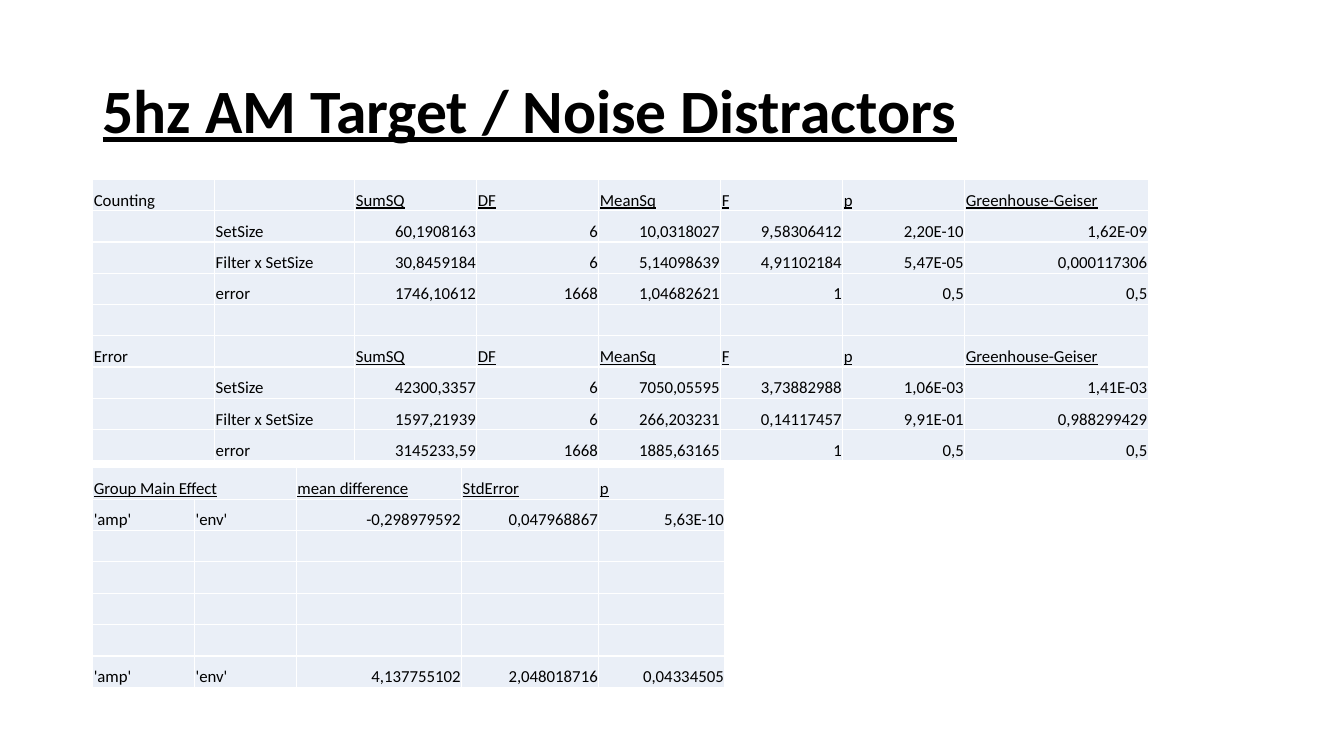
from lxml import etree
from pptx import Presentation
from pptx.dml.color import RGBColor
from pptx.enum.text import MSO_ANCHOR, PP_ALIGN
from pptx.oxml.ns import qn
from pptx.util import Inches, Pt

LEFT, RIGHT = PP_ALIGN.LEFT, PP_ALIGN.RIGHT
MIDDLE, BOTTOM = MSO_ANCHOR.MIDDLE, MSO_ANCHOR.BOTTOM

# Content
TITLE = "5hz AM Target / Noise Distractors"
STATISTICS = ["SumSQ", "DF", "MeanSq", "F", "p", "Greenhouse-Geiser"]
ANOVA = [
    ["Counting", "", *STATISTICS],
    ["", "SetSize", "60,1908163", "6", "10,0318027", "9,58306412", "2,20E-10", "1,62E-09"],
    ["", "Filter x SetSize", "30,8459184", "6", "5,14098639", "4,91102184", "5,47E-05", "0,000117306"],
    ["", "error", "1746,10612", "1668", "1,04682621", "1", "0,5", "0,5"],
    [""] * 8,
    ["Error", "", *STATISTICS],
    ["", "SetSize", "42300,3357", "6", "7050,05595", "3,73882988", "1,06E-03", "1,41E-03"],
    ["", "Filter x SetSize", "1597,21939", "6", "266,203231", "0,14117457", "9,91E-01", "0,988299429"],
    ["", "error", "3145233,59", "1668", "1885,63165", "1", "0,5", "0,5"],
]
GROUP_EFFECT = [
    ["Group Main Effect", "", "mean difference", "StdError", "p"],
    ["'amp'", "'env'", "-0,298979592", "0,047968867", "5,63E-10"],
    *[[""] * 5 for _ in range(4)],
    ["'amp'", "'env'", "4,137755102", "2,048018716", "0,04334505"],
]

# Layout and style
MARGIN_LEFT = 0.92
ANOVA_WIDTHS = [1.21, 1.39, 1.21, 1.21, 1.21, 1.21, 1.21, 1.82]
GROUP_WIDTHS = [1.01, 1.01, 1.64, 1.36, 1.25]
LABEL_COLUMNS = 2
FONT = "Calibri"
BLACK, WHITE, PALE_BLUE = "000000", "FFFFFF", "EAEFF7"


def color(hex_code):
    return RGBColor.from_string(hex_code)


def write_text(frame, text, size=12, bold=False, underline=False, align=LEFT, spacing=1.0):
    paragraph = frame.paragraphs[0]
    paragraph.alignment = align
    paragraph.line_spacing = spacing
    run = paragraph.add_run()
    run.text = text
    run.font.name = FONT
    run.font.size = Pt(size)
    run.font.bold = bold
    run.font.underline = underline
    run.font.color.rgb = color(BLACK)


def draw_borders(cell):
    properties = cell._tc.get_or_add_tcPr()
    for position, side in enumerate(("lnL", "lnR", "lnT", "lnB")):
        line = etree.Element(qn(f"a:{side}"), w=str(Pt(1)))
        fill = etree.SubElement(line, qn("a:solidFill"))
        etree.SubElement(fill, qn("a:srgbClr"), val=WHITE)
        properties.insert(position, line)


def add_results(slide, rows, widths, top, height, header_rows, underline_from):
    frame = slide.shapes.add_table(len(rows), len(widths), Inches(MARGIN_LEFT), Inches(top),
                                   Inches(sum(widths)), Inches(height))
    table = frame.table
    table.first_row = table.horz_banding = False
    for column, width in zip(table.columns, widths):
        column.width = Inches(width)
    for r, values in enumerate(rows):
        is_header = r in header_rows
        for c, value in enumerate(values):
            cell = table.cell(r, c)
            cell.margin_left = cell.margin_right = cell.margin_top = Inches(0.01)
            cell.margin_bottom = 0
            cell.vertical_anchor = BOTTOM
            cell.fill.solid()
            cell.fill.fore_color.rgb = color(PALE_BLUE)
            draw_borders(cell)
            is_number = c >= LABEL_COLUMNS and not is_header
            write_text(cell.text_frame, value, align=RIGHT if is_number else LEFT,
                       underline=is_header and c >= underline_from)
    return table


def main():
    deck = Presentation()
    deck.slide_width, deck.slide_height = Inches(13.33), Inches(7.5)
    slide = deck.slides.add_slide(deck.slide_layouts[6])

    # Title
    title = slide.shapes.add_textbox(Inches(MARGIN_LEFT), Inches(0.4), Inches(11.5), Inches(1.45))
    title.text_frame.word_wrap = True
    title.text_frame.vertical_anchor = MIDDLE
    write_text(title.text_frame, TITLE, size=44, bold=True, underline=True, spacing=0.9)

    # Result tables
    add_results(slide, ANOVA, ANOVA_WIDTHS, top=1.78, height=2.59,
                header_rows=(0, 5), underline_from=LABEL_COLUMNS)
    group = add_results(slide, GROUP_EFFECT, GROUP_WIDTHS, top=4.64, height=2.18,
                        header_rows=(0,), underline_from=0)
    group.cell(0, 0).merge(group.cell(0, 1))

    deck.save("out.pptx")


if __name__ == "__main__":
    main()
